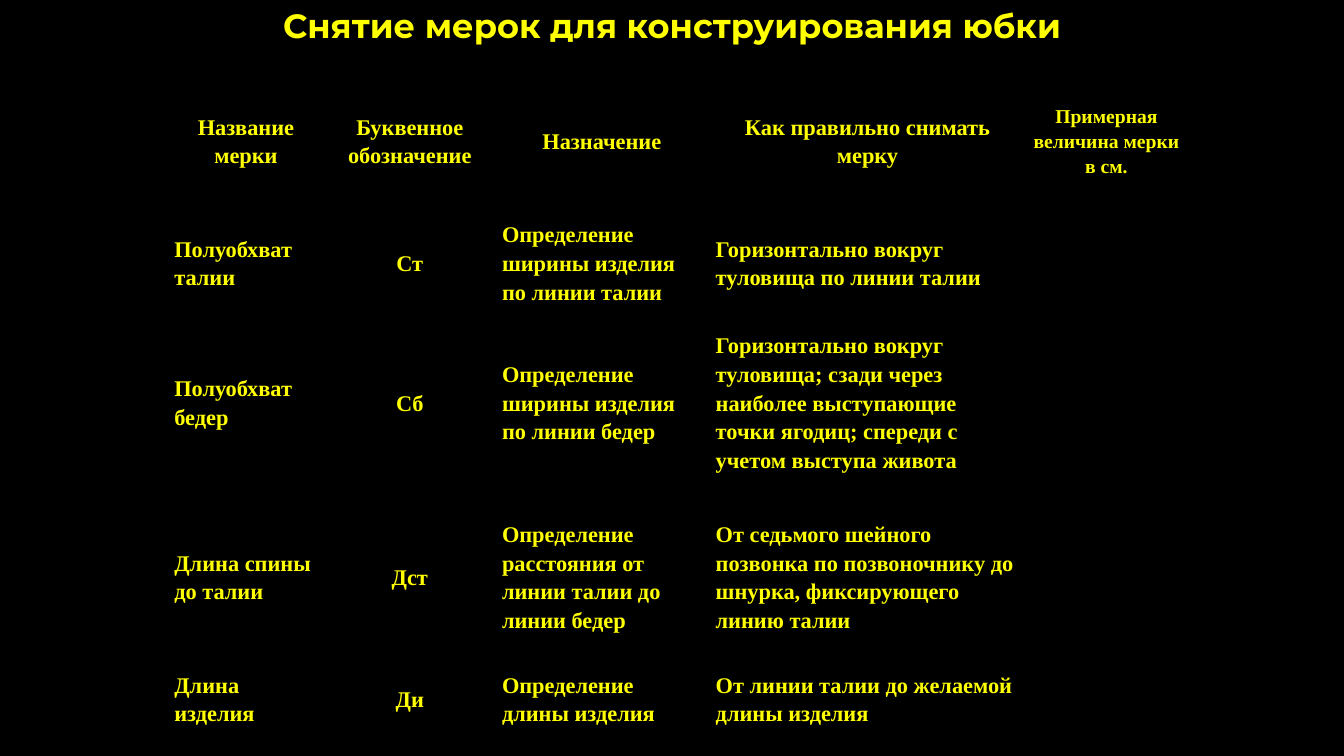
from dataclasses import dataclass

from lxml import etree
from pptx import Presentation
from pptx.dml.color import RGBColor
from pptx.enum.text import MSO_ANCHOR, MSO_AUTO_SIZE, PP_ALIGN
from pptx.oxml.ns import qn
from pptx.util import Emu, Pt

LEFT, CENTER = PP_ALIGN.LEFT, PP_ALIGN.CENTER
MIDDLE = MSO_ANCHOR.MIDDLE
FIT_SHAPE = MSO_AUTO_SIZE.SHAPE_TO_FIT_TEXT

EMU_PER_PX = 9144
TITLE_ONLY = 5
COLORS = {"background": "000000", "border": "000000", "text": "FFFF00"}
TITLE_FONT, TABLE_FONT = "Montserrat", "Times New Roman"
TITLE = "Снятие мерок для конструирования юбки"


@dataclass
class Column:
    heading: str
    width: int
    align: PP_ALIGN = LEFT
    heading_size: int = 16


@dataclass
class Measure:
    name: str
    symbol: str
    purpose: str
    method: str
    height: int


COLUMNS = [
    Column("Название мерки", 156),
    Column("Буквенное обозначение", 169, CENTER),
    Column("Назначение", 212),
    Column("Как правильно снимать мерку", 315),
    Column("Примерная величина мерки в см.", 159, heading_size=14),
]
HEADING_HEIGHT = 138
MEASURES = [
    Measure("Полуобхват талии", "Ст",
            "Определение ширины изделия по линии талии",
            "Горизонтально вокруг туловища по линии талии", 104),
    Measure("Полуобхват бедер", "Сб",
            "Определение ширины изделия по линии бедер",
            "Горизонтально вокруг туловища; сзади через наиболее выступающие "
            "точки ягодиц; спереди с учетом выступа живота", 173),
    Measure("Длина спины до талии", "Дст",
            "Определение расстояния от линии талии до линии бедер",
            "От седьмого шейного позвонка по позвоночнику до шнурка, "
            "фиксирующего линию талии", 173),
    Measure("Длина изделия", "Ди",
            "Определение длины изделия",
            "От линии талии до желаемой длины изделия", 69),
]


def px(value: int) -> Emu:
    return Emu(value * EMU_PER_PX)


def color(name: str) -> RGBColor:
    return RGBColor.from_string(COLORS[name])


def format_text(p, font: str, size: int, align: PP_ALIGN) -> None:
    p.alignment = align
    for r in p.runs:
        r.font.name = font
        r.font.size = Pt(size)
        r.font.bold = True
        r.font.color.rgb = color("text")


def add_borders(cell) -> None:
    tcPr = cell._tc.get_or_add_tcPr()
    for side in ("lnL", "lnR", "lnT", "lnB"):
        ln = etree.SubElement(tcPr, qn(f"a:{side}"), w=str(Pt(1)))
        fill = etree.SubElement(ln, qn("a:solidFill"))
        etree.SubElement(fill, qn("a:srgbClr"), val=COLORS["border"])


def format_cell(cell) -> None:
    add_borders(cell)
    cell.fill.background()


def fill_cell(cell, text: str, size: int, align: PP_ALIGN) -> None:
    cell.vertical_anchor = MIDDLE
    cell.margin_left = cell.margin_right = px(7)
    cell.margin_top = cell.margin_bottom = 0
    p = cell.text_frame.paragraphs[0]
    p.text = text
    p.line_spacing = 1.15
    p.space_after = Pt(6)
    format_text(p, TABLE_FONT, size, align)


def add_title(s) -> None:
    title = s.shapes.title
    title.left, title.top, title.width, title.height = 0, 0, px(1333), px(50)
    tf = title.text_frame
    tf.text = TITLE
    tf.word_wrap = True
    tf.auto_size = FIT_SHAPE
    tf.vertical_anchor = MIDDLE
    format_text(tf.paragraphs[0], TITLE_FONT, 24, CENTER)


def add_measures_table(s) -> None:
    heights = [HEADING_HEIGHT] + [m.height for m in MEASURES]
    width = sum(c.width for c in COLUMNS)
    frame = s.shapes.add_table(len(heights), len(COLUMNS), px(166), px(70),
                               px(width), px(sum(heights)))
    table = frame.table
    table.first_row = table.horz_banding = False
    for row, height in zip(table.rows, heights):
        row.height = px(height)
    for i, column in enumerate(COLUMNS):
        table.columns[i].width = px(column.width)
        fill_cell(table.cell(0, i), column.heading, column.heading_size, CENTER)
    for i, m in enumerate(MEASURES, start=1):
        for j, text in enumerate((m.name, m.symbol, m.purpose, m.method)):
            fill_cell(table.cell(i, j), text, 16, COLUMNS[j].align)
    for cell in table.iter_cells():
        format_cell(cell)


def main() -> None:
    prs = Presentation()
    prs.slide_width, prs.slide_height = px(1333), px(750)
    s = prs.slides.add_slide(prs.slide_layouts[TITLE_ONLY])
    s.background.fill.solid()
    s.background.fill.fore_color.rgb = color("background")
    add_title(s)
    add_measures_table(s)
    prs.save("out.pptx")


if __name__ == "__main__":
    main()
